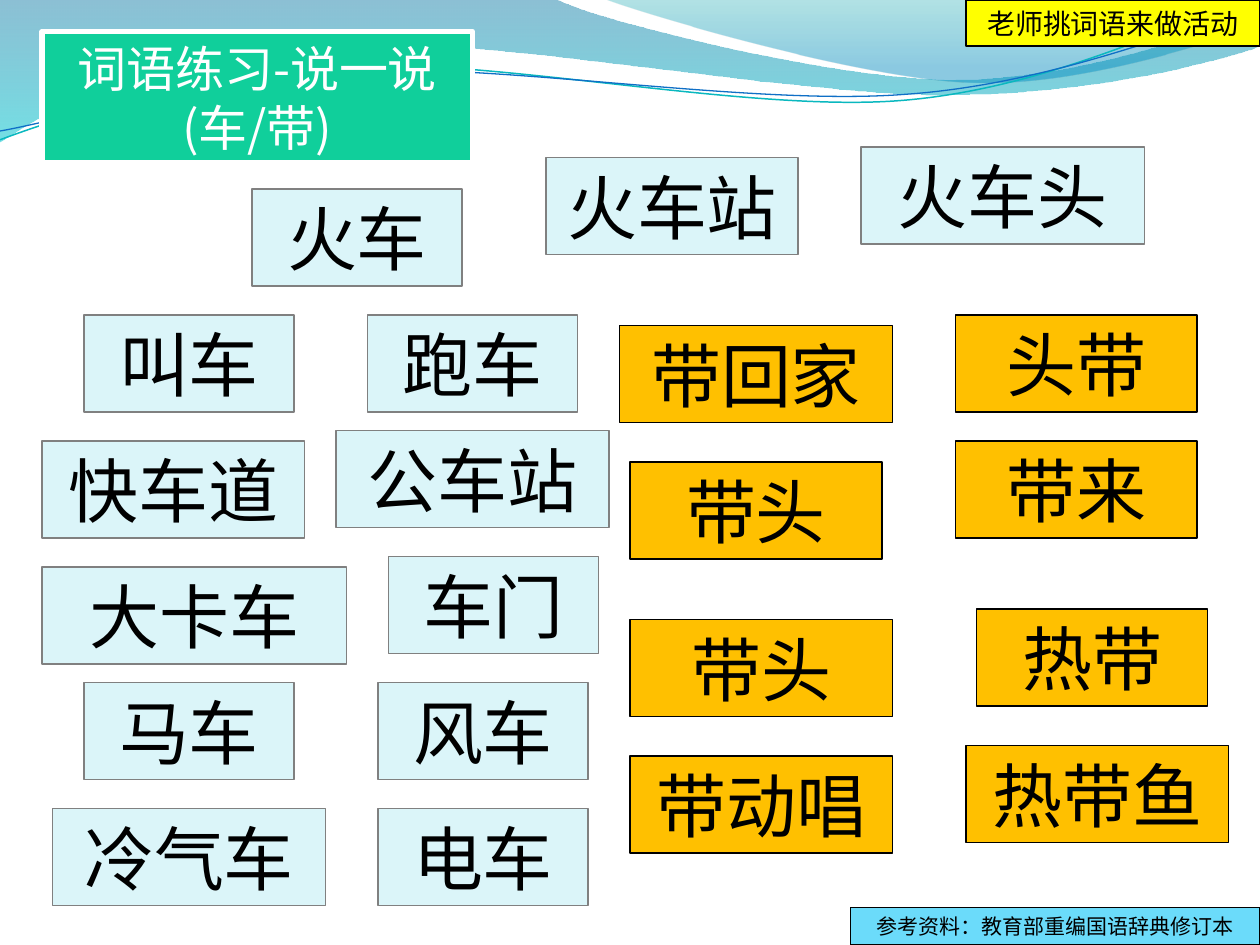
from dataclasses import dataclass
from typing import NamedTuple

import lxml.etree
import pptx
import pptx.dml.color
import pptx.enum.shapes
import pptx.enum.text
import pptx.oxml
import pptx.oxml.ns
import pptx.util

WIDTH, HEIGHT = 10, 7.5
COLUMNS, ROWS = 120, 90  # square cells, twelve to the inch
CARD_ROWS = 9.25
qn = pptx.oxml.ns.qn


@dataclass(frozen=True)
class Theme:
    font: str = "Noto Sans CJK SC"
    ink: str = "000000"
    white: str = "FFFFFF"
    card_line: str = "808080"
    che: str = "DBF5F9"
    dai: str = "FFC000"
    title: str = "10CF9B"
    note: str = "FFFF00"
    source: str = "6BDBFA"
    word_pt: float = 40
    title_pt: float = 28
    note_pt: float = 16
    source_pt: float = 12


class Card(NamedTuple):
    text: str
    col: float
    row: float
    cols: float


class Stop(NamedTuple):
    position: float
    color: str
    opacity: int


class Wave(NamedTuple):
    """Points are (x, y) for a line or (x1, y1, x2, y2, x, y) for a curve, in inches."""
    points: list
    stops: tuple = ()
    line: str = ""
    line_pt: float = 0


THEME = Theme()

WAVES = [
    Wave([(0, 0), (4.4, -0.01), (4.76, 0.17, 6.64, 0.63, 7.58, 0.63),
          (8.53, 0.63, 9.58, 0.26, 10, 0.09), (10.01, 0.36),
          (9.83, 0.44, 8.7, 0.76, 7.46, 0.75), (6.22, 0.75, 3.82, 0.28, 2.57, 0.34),
          (1.29, 0.36, 0.46, 0.83, -0.01, 1.13)],
         stops=(Stop(0, "0074A1", 45), Stop(1, "00C6CF", 55))),
    Wave([(4.79, -0.01), (5.09, 0.11, 6.82, 0.62, 7.69, 0.65),
          (8.56, 0.69, 9.61, 0.32, 10, 0.21), (10, 0)],
         stops=(Stop(0, "00A1A9", 30), Stop(0.8, "008BBF", 45))),
    Wave([(0, 1.11), (0.48, 0.93, 1.58, 0.57, 2.77, 0.52),
          (3.95, 0.47, 5.93, 0.89, 7.13, 0.8), (8.33, 0.71, 9.38, 0.15, 9.98, -0.02)],
         line="0AB8BF", line_pt=0.85),
    Wave([(0, 1.04), (0.47, 0.96, 1.64, 0.61, 2.83, 0.56),
          (4.03, 0.51, 5.97, 0.84, 7.17, 0.75), (8.36, 0.67, 9.41, 0.21, 10, 0.06)],
         line="0F6FC6", line_pt=0.75),
]

DAI_CARDS = [
    Card("带头", 60, 44, 24), Card("带头", 60, 59, 25), Card("带来", 91, 42, 23),
    Card("带回家", 59, 31, 26), Card("带动唱", 60, 72, 25), Card("热带", 93, 58, 22),
    Card("热带鱼", 92, 71, 25), Card("头带", 91, 30, 23),
]
CHE_CARDS = [
    Card("冷气车", 5, 77, 26), Card("快车道", 4, 42, 25), Card("电车", 36, 77, 20),
    Card("跑车", 35, 30, 20), Card("公车站", 32, 41, 26), Card("风车", 36, 65, 20),
    Card("大卡车", 4, 54, 29), Card("马车", 8, 65, 20), Card("车门", 37, 53, 20),
    Card("火车头", 82, 14, 27), Card("火车站", 52, 15, 24), Card("火车", 24, 18, 20),
    Card("叫车", 8, 30, 20),
]


def rgb(color: str):
    return pptx.dml.color.RGBColor.from_string(color)


def across(cols: float) -> int:
    return pptx.util.Inches(WIDTH * cols / COLUMNS)


def down(rows: float) -> int:
    return pptx.util.Inches(HEIGHT * rows / ROWS)


def bend(sp, points: list) -> None:
    """Turn the straight segments that belong to curves into cubic ones."""
    segments = list(sp._element.spPr.iter(qn("a:lnTo")))
    for segment, point in zip(segments, points[1:]):
        if len(point) == 2:
            continue
        curve = lxml.etree.Element(qn("a:cubicBezTo"))
        for x, y in zip(point[::2], point[1::2]):
            lxml.etree.SubElement(curve, qn("a:pt"), x=str(pptx.util.Inches(x) - sp.left),
                                  y=str(pptx.util.Inches(y) - sp.top))
        segment.getparent().replace(segment, curve)


def draw_wave(s, wave: Wave) -> None:
    first, *rest = [tuple(pptx.util.Inches(v) for v in point[-2:]) for point in wave.points]
    builder = s.shapes.build_freeform(*first)
    builder.add_line_segments(rest, close=bool(wave.stops))
    sp = builder.convert_to_shape()
    bend(sp, wave.points)
    sp.shadow.inherit = False
    if not wave.stops:
        sp.fill.background()
        sp.line.color.rgb = rgb(wave.line)
        sp.line.width = pptx.util.Pt(wave.line_pt)
        return
    sp.line.fill.background()
    sp.fill.gradient()
    sp.fill.gradient_angle = 270
    for target, stop in zip(sp.fill.gradient_stops, wave.stops):
        target.position = stop.position
        target.color.rgb = rgb(stop.color)
    for color, stop in zip(sp._element.spPr.iter(qn("a:srgbClr")), wave.stops):
        lxml.etree.SubElement(color, qn("a:alpha"), val=str(stop.opacity * 1000))


def write(sp, text: str, *, size: float, color: str = THEME.ink) -> None:
    tf = sp.text_frame
    tf.word_wrap = True
    tf.vertical_anchor = pptx.enum.text.MSO_ANCHOR.MIDDLE
    p = tf.paragraphs[0]
    p.alignment = pptx.enum.text.PP_ALIGN.CENTER
    r = p.add_run()
    r.text = text
    r.font.size = pptx.util.Pt(size)
    r.font.color.rgb = rgb(color)
    r.font.name = THEME.font
    lxml.etree.SubElement(r.font._element, qn("a:ea"), typeface=THEME.font)


def draw_card(s, card: Card, *, fill: str, size: float = THEME.word_pt, rows: float = CARD_ROWS,
              line: str = THEME.ink, line_pt: float = 0.75, color: str = THEME.ink) -> None:
    sp = s.shapes.add_shape(pptx.enum.shapes.MSO_SHAPE.RECTANGLE, across(card.col),
                            down(card.row), across(card.cols), down(rows))
    sp.shadow.inherit = False
    sp.fill.solid()
    sp.fill.fore_color.rgb = rgb(fill)
    sp.line.color.rgb = rgb(line)
    sp.line.width = pptx.util.Pt(line_pt)
    write(sp, card.text, size=size, color=color)


def main() -> None:
    prs = pptx.Presentation()
    prs.slide_width, prs.slide_height = pptx.util.Inches(WIDTH), pptx.util.Inches(HEIGHT)
    s = prs.slides.add_slide(prs.slide_layouts[6])
    for wave in WAVES:
        draw_wave(s, wave)
    for card in DAI_CARDS[:3]:
        draw_card(s, card, fill=THEME.dai)
    draw_card(s, Card("词语练习-说一说(车/带)", 4, 3, 41), rows=12.5, fill=THEME.title,
              line=THEME.white, line_pt=3, size=THEME.title_pt, color=THEME.white)
    for card in DAI_CARDS[3:]:
        draw_card(s, card, fill=THEME.dai)
    for card in CHE_CARDS:
        draw_card(s, card, fill=THEME.che, line=THEME.card_line)
    draw_card(s, Card("参考资料：教育部重编国语辞典修订本", 81, 86.4, 39), rows=3.6,
              fill=THEME.source, size=THEME.source_pt)
    draw_card(s, Card("老师挑词语来做活动", 92, 0, 28), rows=4.4,
              fill=THEME.note, size=THEME.note_pt)
    prs.save("out.pptx")


if __name__ == "__main__":
    main()
